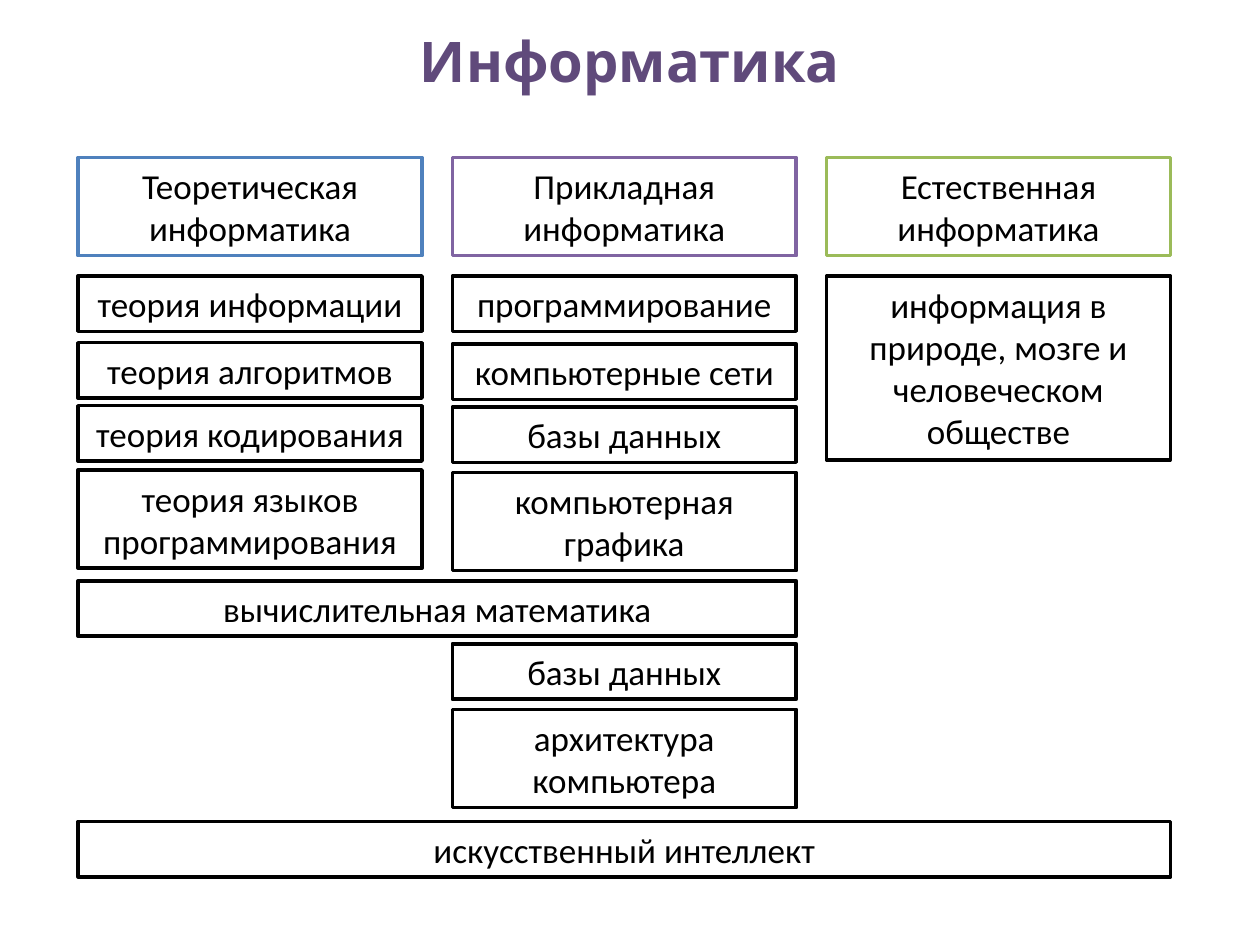
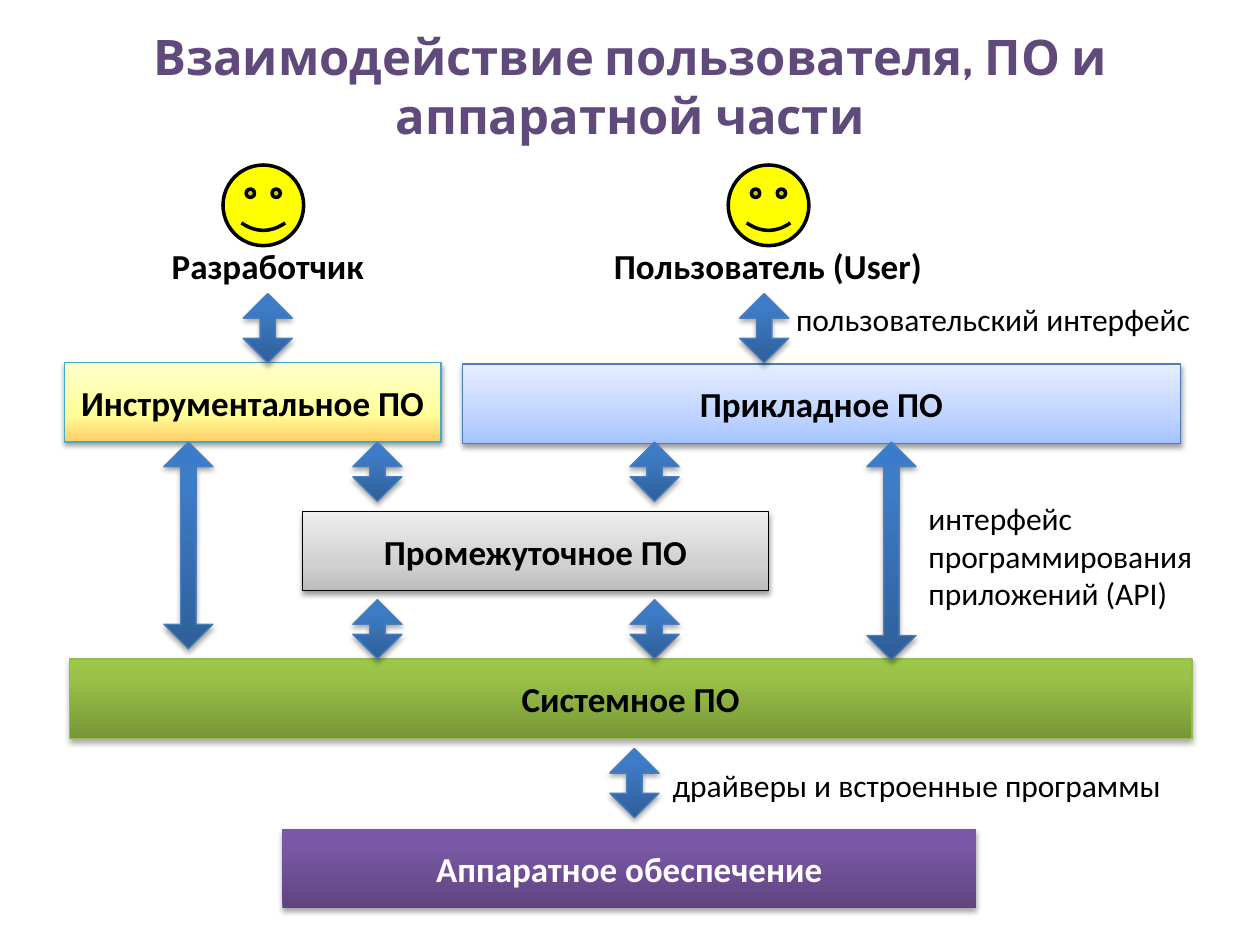
"""Build two slides on the branches of informatics and the layers of software."""
import copy
import dataclasses

import lxml.etree
import pptx
import pptx.dml.color
import pptx.enum.shapes
import pptx.enum.text
import pptx.oxml.ns
import pptx.util

Inches = pptx.util.Inches
Pt = pptx.util.Pt
Shapes = pptx.enum.shapes.MSO_SHAPE
Align = pptx.enum.text.PP_ALIGN
Anchor = pptx.enum.text.MSO_ANCHOR
AutoSize = pptx.enum.text.MSO_AUTO_SIZE
qn = pptx.oxml.ns.qn


@dataclasses.dataclass(frozen=True)
class Gradient:
    """Colour stops from bottom to top, with the shadow that goes with them."""
    stops: tuple
    shadow_alpha: int
    shadow_distance: float


def soft(bottom, middle, top):
    """Return a pale gradient."""
    return Gradient(((0, bottom), (0.35, middle), (1, top)), 38, 1.6)


def deep(bottom, middle, top):
    """Return a saturated gradient."""
    return Gradient(((0, bottom), (0.8, middle), (1, top)), 35, 1.8)


@dataclasses.dataclass(frozen=True)
class Theme:
    """Fonts, type sizes and colours of both slides."""
    title_font: str = "Cabin"
    body_font: str = "Calibri"
    title_size: int = 32
    long_title_size: int = 28
    body_size: int = 20
    note_size: int = 18
    title: str = "604A7B"
    ink: str = "000000"
    paper: str = "FFFFFF"
    face: str = "FFFF00"
    theoretical: str = "4F81BD"
    applied: str = "8064A2"
    natural: str = "9BBB59"
    arrow_edge: str = "4B7EBC"
    tools_edge: str = "46AAC5"
    system_edge: str = "98B955"
    frame_width: float = 2
    layer_width: float = 0.75
    application: Gradient = soft("A4C4FF", "BFD4FF", "E6EEFF")
    middleware: Gradient = soft("BDBDBD", "D1D1D1", "EEEEEE")
    tools: Gradient = soft("FFCC66", "FFFF99", "FFFFCC")
    system: Gradient = deep("779737", "9BC348", "9DC746")
    hardware: Gradient = deep("5F4480", "7B58A6", "7C57A8")
    arrow: Gradient = deep("2F5F99", "3D7CC7", "3A7CCB")


THEME = Theme()
COLUMN_LEFT, COLUMN_STEP, COLUMN_WIDTH = 0.62, 2.97, 2.73
ARROW_WIDTH, FACE_SIZE, LAYER_HEIGHT = 0.39, 0.64, 0.63


def rgb(colour):
    """Turn a hex string into a colour."""
    return pptx.dml.color.RGBColor.from_string(colour)


def write(frame, text, size=THEME.body_size, font=THEME.body_font, colour=THEME.ink,
          bold=False, align=Align.CENTER, anchor=Anchor.TOP):
    """Put one formatted paragraph into a text frame."""
    frame.word_wrap = True
    frame.vertical_anchor = anchor
    paragraph = frame.paragraphs[0]
    paragraph.alignment = align
    run = paragraph.add_run()
    run.text = text
    run.font.name = font
    run.font.size = Pt(size)
    run.font.bold = bold
    run.font.color.rgb = rgb(colour)


def add_label(slide, text, left, top, width, height, **text_format):
    """Add free text."""
    label = slide.shapes.add_textbox(Inches(left), Inches(top), Inches(width), Inches(height))
    write(label.text_frame, text, **text_format)


def add_title(slide, text, size=THEME.title_size):
    """Add the slide title."""
    add_label(slide, text, 0.5, 0.16, 9, 1.17, size=size, font=THEME.title_font,
              colour=THEME.title, bold=True)


def add_figure(slide, kind, left, top, width, height, edge, edge_width):
    """Add a preset shape with its outline and no inherited shadow."""
    figure = slide.shapes.add_shape(kind, Inches(left), Inches(top), Inches(width), Inches(height))
    figure.shadow.inherit = False
    if edge:
        figure.line.color.rgb = rgb(edge)
        figure.line.width = Pt(edge_width)
    else:
        figure.line.fill.background()
    return figure


def paint(figure, gradient):
    """Fill a shape with a vertical gradient and cast its shadow down."""
    figure.fill.gradient()
    figure.fill.gradient_angle = 90
    properties = figure.element.spPr
    stop_list = properties.find(".//" + qn("a:gsLst"))
    stop_list.append(copy.deepcopy(stop_list[-1]))
    for stop, (position, colour) in zip(figure.fill.gradient_stops, gradient.stops):
        stop.position = position
        stop.color.rgb = rgb(colour)
    shadow = lxml.etree.SubElement(
        properties.find(qn("a:effectLst")), qn("a:outerShdw"),
        blurRad=str(Pt(3.1)), dist=str(Pt(gradient.shadow_distance)),
        dir="5400000", rotWithShape="0")
    tone = lxml.etree.SubElement(shadow, qn("a:srgbClr"), val=THEME.ink)
    lxml.etree.SubElement(tone, qn("a:alpha"), val=str(gradient.shadow_alpha * 1000))


def add_topic(slide, text, column, top, lines=1, span=1, edge=THEME.ink):
    """Add a framed topic that spans one or more columns."""
    topic = add_figure(slide, Shapes.RECTANGLE, COLUMN_LEFT + column * COLUMN_STEP, top,
                       COLUMN_WIDTH + (span - 1) * COLUMN_STEP, 0.1 + 0.34 * lines,
                       edge, THEME.frame_width)
    topic.fill.solid()
    topic.fill.fore_color.rgb = rgb(THEME.paper)
    write(topic.text_frame, text, anchor=Anchor.MIDDLE)


def add_layer(slide, text, left, top, width, gradient, edge, colour=THEME.ink):
    """Add one software or hardware layer."""
    layer = add_figure(slide, Shapes.RECTANGLE, left, top, width, LAYER_HEIGHT,
                       edge, THEME.layer_width)
    paint(layer, gradient)
    write(layer.text_frame, text, colour=colour, bold=True, anchor=Anchor.MIDDLE)


def add_exchange(slide, left, top, height):
    """Add a two-way arrow between layers."""
    arrow = add_figure(slide, Shapes.UP_DOWN_ARROW, left, top, ARROW_WIDTH, height,
                       THEME.arrow_edge, THEME.layer_width)
    arrow.adjustments[0] = 0.5
    arrow.adjustments[1] = 0.312
    paint(arrow, THEME.arrow)


def add_person(slide, role, face_left, role_left, role_width):
    """Add a smiling face with the role under it."""
    face = add_figure(slide, Shapes.SMILEY_FACE, face_left, 1.31, FACE_SIZE, FACE_SIZE,
                      THEME.ink, THEME.frame_width)
    face.fill.solid()
    face.fill.fore_color.rgb = rgb(THEME.face)
    add_label(slide, role, role_left, 1.89, role_width, 0.44, bold=True)


def build_branches(slide):
    """Draw the branches of informatics and their topics."""
    add_title(slide, "Информатика")
    branches = (("Теоретическая", THEME.theoretical), ("Прикладная", THEME.applied),
                ("Естественная", THEME.natural))
    for column, (branch, edge) in enumerate(branches):
        add_topic(slide, f"{branch} информатика", column, 1.25, lines=2, edge=edge)
    topics = (
        ("теория информации", 0, 2.19, 1, 1),
        ("теория алгоритмов", 0, 2.72, 1, 1),
        ("теория кодирования", 0, 3.22, 1, 1),
        ("теория языков программирования", 0, 3.73, 2, 1),
        ("программирование", 1, 2.19, 1, 1),
        ("компьютерные сети", 1, 2.73, 1, 1),
        ("базы данных", 1, 3.23, 1, 1),
        ("компьютерная графика", 1, 3.75, 2, 1),
        ("вычислительная математика", 0, 4.61, 1, 2),
        ("базы данных", 1, 5.11, 1, 1),
        ("архитектура компьютера", 1, 5.63, 2, 1),
        ("искусственный интеллект", 0, 6.52, 1, 3),
        ("информация в природе, мозге и человеческом обществе", 2, 2.19, 4, 1),
    )
    for topic in topics:
        add_topic(slide, *topic)


def build_interaction(slide):
    """Draw how people, software layers and hardware interact."""
    add_title(slide, "Взаимодействие пользователя, ПО и аппаратной части",
              size=THEME.long_title_size)
    add_person(slide, "Разработчик", 1.77, 1.22, 1.81)
    add_person(slide, "Пользователь (User)", 5.78, 4.61, 2.97)

    layers = (
        ("Инструментальное ПО", 0.51, 2.88, 2.99, THEME.tools, THEME.tools_edge),
        ("Прикладное ПО", 3.67, 2.89, 5.7, THEME.application, THEME.arrow_edge),
        ("Промежуточное ПО", 2.4, 4.06, 3.7, THEME.middleware, THEME.ink),
        ("Системное ПО", 0.55, 5.23, 8.91, THEME.system, THEME.system_edge),
        ("Аппаратное обеспечение", 2.24, 6.58, 5.51, THEME.hardware, None, THEME.paper),
    )
    for layer in layers:
        add_layer(slide, *layer)

    for left, top in ((1.93, 2.33), (5.87, 2.33), (4.84, 5.94)):
        add_exchange(slide, left, top, 0.55)
    for left in (2.8, 5):
        for top in (3.51, 4.76):
            add_exchange(slide, left, top, 0.47)
    add_exchange(slide, 1.3, 3.51, 1.64)
    add_exchange(slide, 6.88, 3.51, 1.73)

    interfaces = (
        ("пользовательский интерфейс", 6.22, 2.33, 3.43, 0.4),
        ("интерфейс программирования приложений (API)", 7.27, 3.91, 2.42, 1.01),
        ("драйверы и встроенные программы", 5.24, 6.03, 4.17, 0.4),
    )
    for interface in interfaces:
        add_label(slide, *interface, size=THEME.note_size, align=Align.LEFT)


def main():
    """Build and save the presentation."""
    deck = pptx.Presentation()
    deck.slide_width, deck.slide_height = Inches(10), Inches(7.5)
    blank = deck.slide_layouts[6]
    for build in (build_branches, build_interaction):
        build(deck.slides.add_slide(blank))
    deck.save("out.pptx")


if __name__ == "__main__":
    main()
